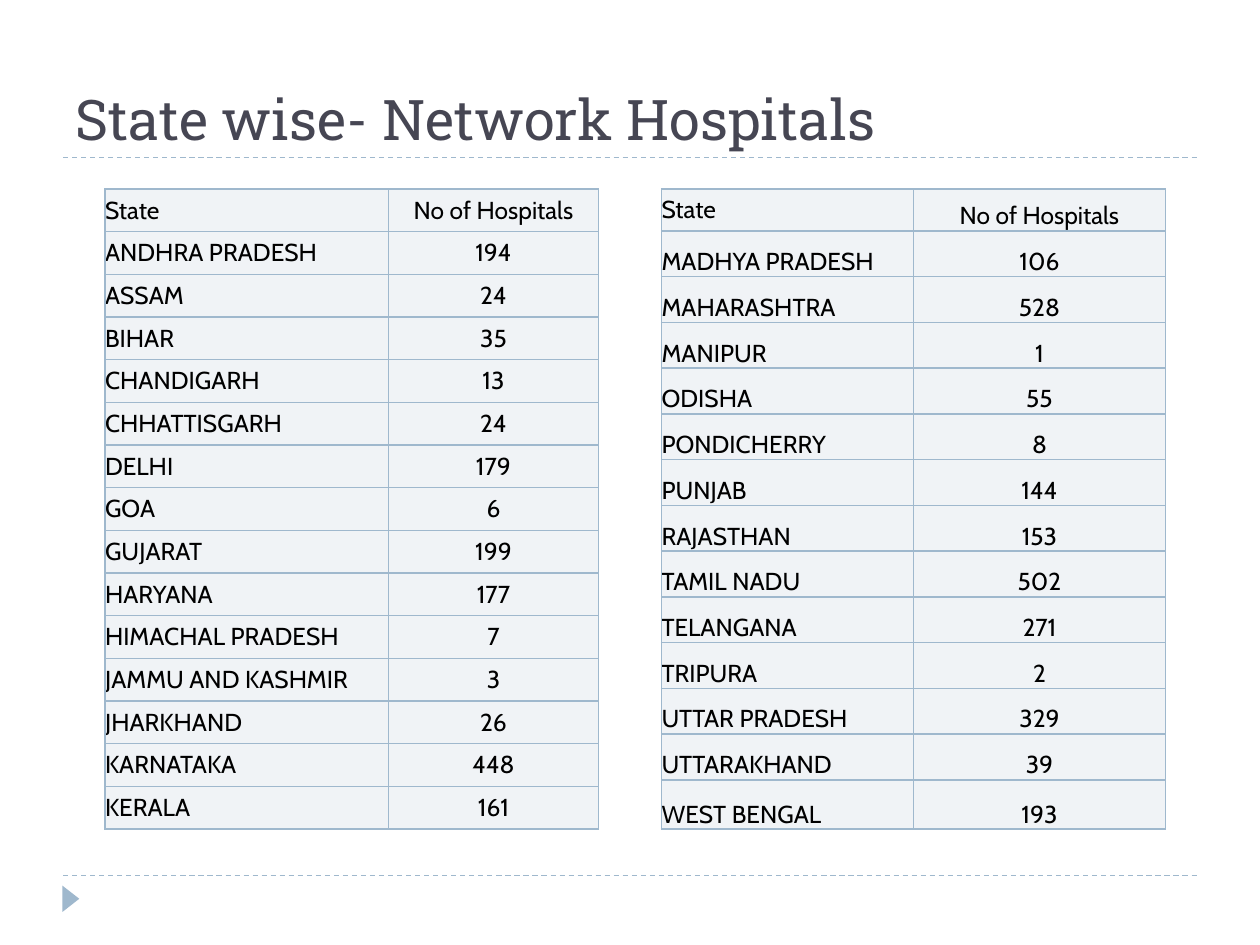
from lxml.etree import SubElement
from pptx import Presentation
from pptx.dml.color import RGBColor as Rgb
from pptx.enum.dml import MSO_LINE as Dash
from pptx.enum.shapes import MSO_CONNECTOR as Connector, MSO_SHAPE as Shape
from pptx.enum.text import MSO_ANCHOR as Anchor, PP_ALIGN as Align
from pptx.oxml.ns import qn
from pptx.util import Inches, Pt
from dataclasses import dataclass


@dataclass(frozen=True)
class Theme:
    accent: str = "9FB8CD"
    title: str = "464653"
    body: str = "000000"
    cell: str = "F0F3F6"
    title_font: str = "Roboto Slab"
    body_font: str = "Cabin"
    title_size: int = 32
    body_size: int = 14
    rule_width: float = 0.75
    border_width: int = 1


theme = Theme()


def grid(*units):
    """Turn units of a 120 by 90 grid over the slide into lengths."""
    return [Inches(unit / 12) for unit in units]


def write(frame, text, *, font, size, color, align=Align.LEFT):
    frame.text = text
    paragraph = frame.paragraphs[0]
    paragraph.alignment = align
    paragraph.font.name = font
    paragraph.font.size = Pt(size)
    paragraph.font.color.rgb = Rgb.from_string(color)


deck = Presentation()
deck.slide_width, deck.slide_height = grid(120, 90)
slide = deck.slides.add_slide(deck.slide_layouts[6])
shapes = slide.shapes

# Footer and title rules
for rule_y in (83.4, 15):
    rule = shapes.add_connector(Connector.STRAIGHT, *grid(6, rule_y, 114, rule_y))
    rule.line.color.rgb = Rgb.from_string(theme.accent)
    rule.line.width = Pt(theme.rule_width)
    rule.line.dash_style = Dash.DASH
    SubElement(rule._element.spPr, qn("a:effectLst"))

# Footer marker, pointing right
marker = shapes.add_shape(Shape.ISOSCELES_TRIANGLE, *grid(5.5, 84.8, 2.5, 1.6))
marker.rotation = 90
marker.shadow.inherit = False
marker.fill.solid()
marker.fill.fore_color.rgb = Rgb.from_string(theme.accent)
marker.line.fill.background()

title = shapes.add_textbox(*grid(6, 2, 108, 13)).text_frame
title.word_wrap = True
title.vertical_anchor = Anchor.BOTTOM
write(title, "State wise- Network Hospitals", font=theme.title_font,
      size=theme.title_size, color=theme.title)

heading = ("State", "No of Hospitals")
first_states = [
    heading, ("ANDHRA PRADESH", 194), ("ASSAM", 24), ("BIHAR", 35),
    ("CHANDIGARH", 13), ("CHHATTISGARH", 24), ("DELHI", 179), ("GOA", 6),
    ("GUJARAT", 199), ("HARYANA", 177), ("HIMACHAL PRADESH", 7),
    ("JAMMU AND KASHMIR", 3), ("JHARKHAND", 26), ("KARNATAKA", 448),
    ("KERALA", 161),
]
last_states = [
    heading, ("MADHYA PRADESH", 106), ("MAHARASHTRA", 528), ("MANIPUR", 1),
    ("ODISHA", 55), ("PONDICHERRY", 8), ("PUNJAB", 144), ("RAJASTHAN", 153),
    ("TAMIL NADU", 502), ("TELANGANA", 271), ("TRIPURA", 2),
    ("UTTAR PRADESH", 329), ("UTTARAKHAND", 39), ("WEST BENGAL", 193),
]

table_top, table_height = 18, 61
first_heights = [table_height / len(first_states)] * len(first_states)
header_row, closing_row = 4, 4.7
inner_count = len(last_states) - 2
inner_row = (table_height - header_row - closing_row) / inner_count
last_heights = [header_row, *[inner_row] * inner_count, closing_row]

# Records, left edge, column widths, row heights, anchor of all but the first cell
listings = [
    (first_states, 10, (27, 20), first_heights, Anchor.MIDDLE),
    (last_states, 63, (24, 24), last_heights, Anchor.BOTTOM),
]

for records, left, widths, heights, anchor in listings:
    table = shapes.add_table(
        len(records), len(widths),
        *grid(left, table_top, sum(widths), table_height)).table
    table.first_row = table.horz_banding = False
    for column, width in zip(table.columns, grid(*widths)):
        column.width = width
    for row, height in zip(table.rows, grid(*heights)):
        row.height = height

    for row_index, record in enumerate(records):
        for column_index, value in enumerate(record):
            cell = table.cell(row_index, column_index)
            is_corner = row_index == column_index == 0
            cell.vertical_anchor = Anchor.MIDDLE if is_corner else anchor
            cell.margin_left = cell.margin_right = 0
            cell.margin_top = cell.margin_bottom = 0
            write(cell.text_frame, str(value), font=theme.body_font,
                  size=theme.body_size, color=theme.body,
                  align=Align.CENTER if column_index else Align.LEFT)
            properties = cell._tc.get_or_add_tcPr()
            for side in ("lnL", "lnR", "lnT", "lnB"):
                border = SubElement(properties, qn(f"a:{side}"),
                                    w=str(Pt(theme.border_width)))
                paint = SubElement(border, qn("a:solidFill"))
                SubElement(paint, qn("a:srgbClr"), val=theme.accent)
            cell.fill.solid()
            cell.fill.fore_color.rgb = Rgb.from_string(theme.cell)

deck.save("out.pptx")
